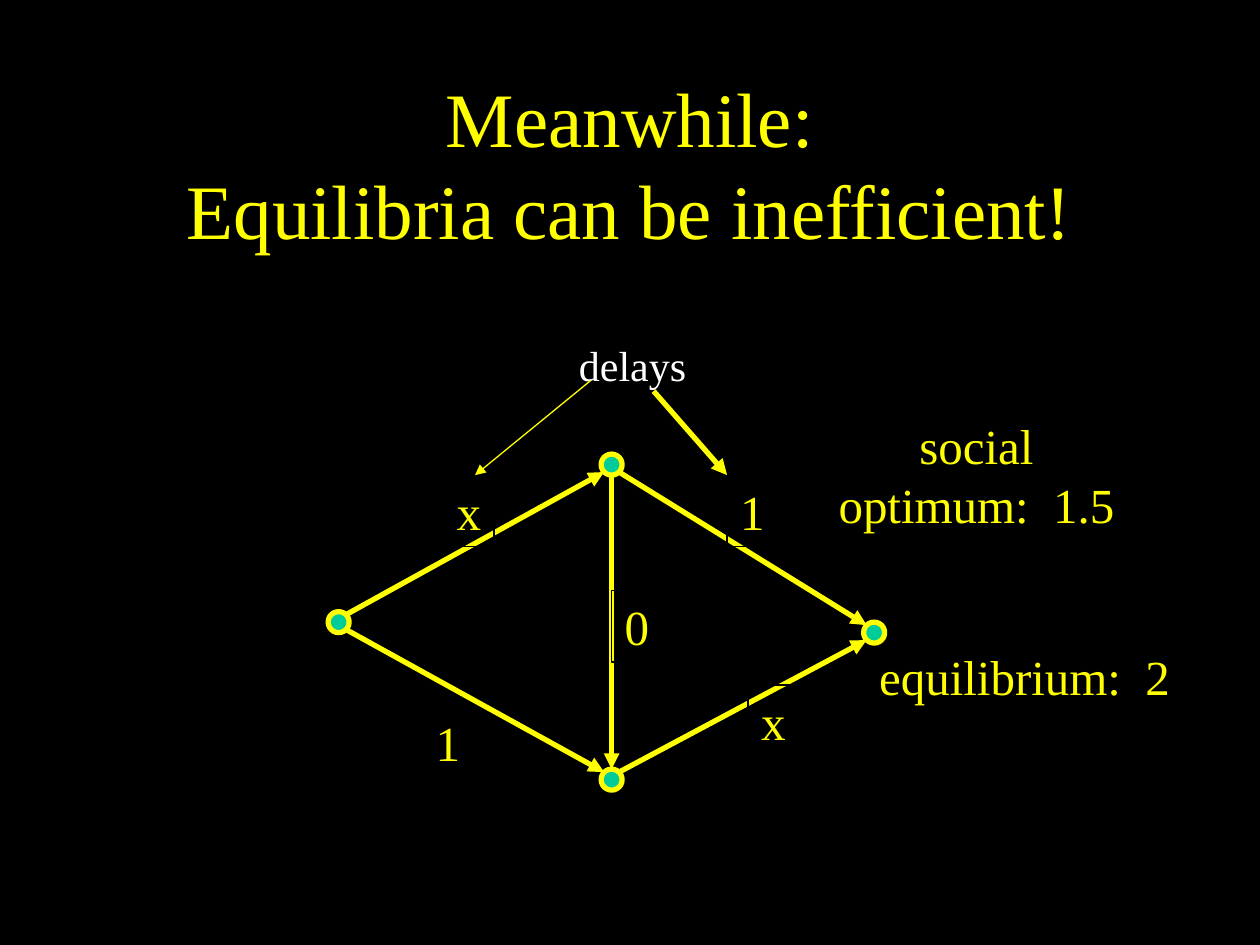
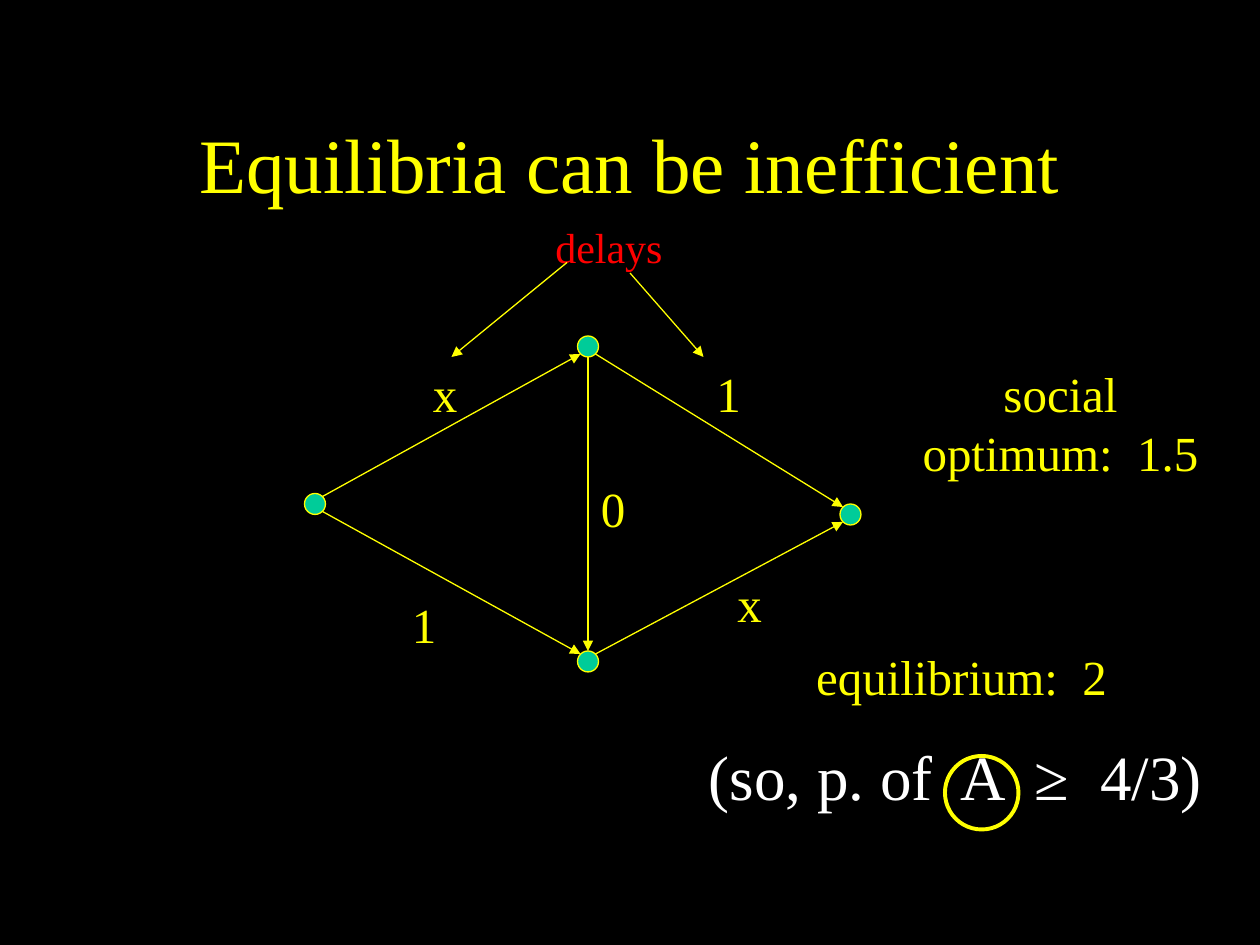
"""Build two slides on inefficient equilibria in a small routing network."""
from lxml.etree import SubElement
from pptx import Presentation
from pptx.dml.color import RGBColor
from pptx.enum.shapes import MSO_CONNECTOR, MSO_SHAPE
from pptx.enum.text import MSO_ANCHOR, MSO_AUTO_SIZE, PP_ALIGN
from pptx.oxml.ns import qn
from pptx.util import Inches, Pt

COLORS = {
    "background": "000000",
    "accent": "FFFF00",
    "node": "00CC99",
    "white": "FFFFFF",
    "red": "FF0000",
}
COLORS = {name: RGBColor.from_string(value) for name, value in COLORS.items()}
FONT = "Times New Roman"
CELL = Inches(10) / 120
DIAGONAL = 0.71
THIN, THICK = 0.75, 3

NODES = {"left": (30, 48), "bottom": (56, 63), "top": (56, 33), "right": (81, 49)}
EDGES = [
    ("left", "top"),
    ("left", "bottom"),
    ("top", "right"),
    ("bottom", "right"),
    ("top", "bottom"),
]
LABELS = [("x", 40, 34), ("1", 38, 56), ("0", 56, 45), ("1", 67, 34), ("x", 69, 54)]
POINTERS = [((54, 25), (43, 34)), ((60, 26), (67, 34))]

SLIDES = [
    {
        "title": "Meanwhile:\nEquilibria can be inefficient!",
        "shift": (2.25, 11.25),
        "width": THICK,
        "pointer_widths": (THIN, THICK),
        "label_outline": "background",
        "delays_color": "white",
        "optimum": (77, 39, 32, 12.5),
        "equilibrium": (78, 61, 38, 6.8),
        "conclusion": [],
    },
    {
        "title": "Equilibria can be inefficient",
        "shift": (0, 0),
        "width": THIN,
        "pointer_widths": (THIN, THIN),
        "label_outline": None,
        "delays_color": "red",
        "optimum": (85, 34, 32, 12.5),
        "equilibrium": (66, 61, 50, 17.75),
        "conclusion": [("(so, p. of  A  ≥  4/3)", 36, "white")],
    },
]


def add_text(slide, text, box, size=28, color="accent", wrap=True, grow=True,
             anchor=MSO_ANCHOR.TOP, outline=None, extra=()):
    """Add centred text in a box given in grid cells, outlined on request."""
    frame_box = [round(value * CELL) for value in box]
    if outline:
        shape = slide.shapes.add_shape(MSO_SHAPE.RECTANGLE, *frame_box)
        shape.shadow.inherit = False
        shape.fill.background()
        shape.line.color.rgb = COLORS[outline]
        shape.line.width = Pt(THIN)
    else:
        shape = slide.shapes.add_textbox(*frame_box)
    frame = shape.text_frame
    frame.word_wrap = wrap
    frame.vertical_anchor = anchor
    frame.auto_size = MSO_AUTO_SIZE.SHAPE_TO_FIT_TEXT if grow else MSO_AUTO_SIZE.NONE
    for index, (words, points, shade) in enumerate([(text, size, color), *extra]):
        paragraph = frame.add_paragraph() if index else frame.paragraphs[0]
        paragraph.text = words
        paragraph.alignment = PP_ALIGN.CENTER
        if index:
            paragraph.space_before = Pt(points / 2)
        for run in paragraph.runs:
            run.font.name = FONT
            run.font.size = Pt(points)
            run.font.color.rgb = COLORS[shade]


def add_arrow(slide, start, end, width):
    """Add a straight arrow between two points given in grid cells."""
    ends = [round(value * CELL) for value in (*start, *end)]
    connector = slide.shapes.add_connector(MSO_CONNECTOR.STRAIGHT, *ends)
    connector.line.color.rgb = COLORS["accent"]
    connector.line.width = Pt(width)
    SubElement(connector.line._get_or_add_ln(), qn("a:tailEnd"), type="triangle")
    SubElement(connector._element.spPr, qn("a:effectLst"))


presentation = Presentation()
presentation.slide_width, presentation.slide_height = Inches(10), Inches(7.5)
background = presentation.slide_master.background.fill
background.solid()
background.fore_color.rgb = COLORS["background"]

for content in SLIDES:
    slide = presentation.slides.add_slide(presentation.slide_layouts[6])
    shift_x, shift_y = content["shift"]
    add_text(slide, content["title"], (9, 8, 102, 15), size=44, grow=False,
             anchor=MSO_ANCHOR.MIDDLE)

    nodes = {name: (x + shift_x, y + shift_y) for name, (x, y) in NODES.items()}
    circles = [(x - 1, y - 1, 2, "node", content["width"]) for x, y in nodes.values()]
    if content["conclusion"]:
        circles.append((90, 72, 7, None, 2.25))
    for left, top, diameter, fill, width in circles:
        box = [round(value * CELL) for value in (left, top, diameter, diameter)]
        circle = slide.shapes.add_shape(MSO_SHAPE.OVAL, *box)
        circle.shadow.inherit = False
        circle.line.color.rgb = COLORS["accent"]
        circle.line.width = Pt(width)
        if fill:
            circle.fill.solid()
            circle.fill.fore_color.rgb = COLORS[fill]
        else:
            circle.fill.background()

    for source, target in EDGES:
        (x1, y1), (x2, y2) = nodes[source], nodes[target]
        step_x = DIAGONAL if x2 > x1 else 0
        step_y = (DIAGONAL if step_x else 1) * (1 if y2 > y1 else -1)
        add_arrow(slide, (x1 + step_x, y1 + step_y), (x2 - step_x, y2 - step_y),
                  content["width"])

    for text, x, y in LABELS:
        add_text(slide, text, (x + shift_x, y + shift_y, 4.8, 6.8), wrap=False,
                 outline=content["label_outline"])

    add_text(slide, "delays", (51.7 + shift_x, 20.5 + shift_y, 12.6, 6), size=24,
             color=content["delays_color"], wrap=False)
    for (start, end), width in zip(POINTERS, content["pointer_widths"]):
        add_arrow(slide, (start[0] + shift_x, start[1] + shift_y),
                  (end[0] + shift_x, end[1] + shift_y), width)

    add_text(slide, "social optimum:  1.5", content["optimum"])
    add_text(slide, " equilibrium:  2", content["equilibrium"],
             extra=content["conclusion"])

presentation.save("out.pptx")
